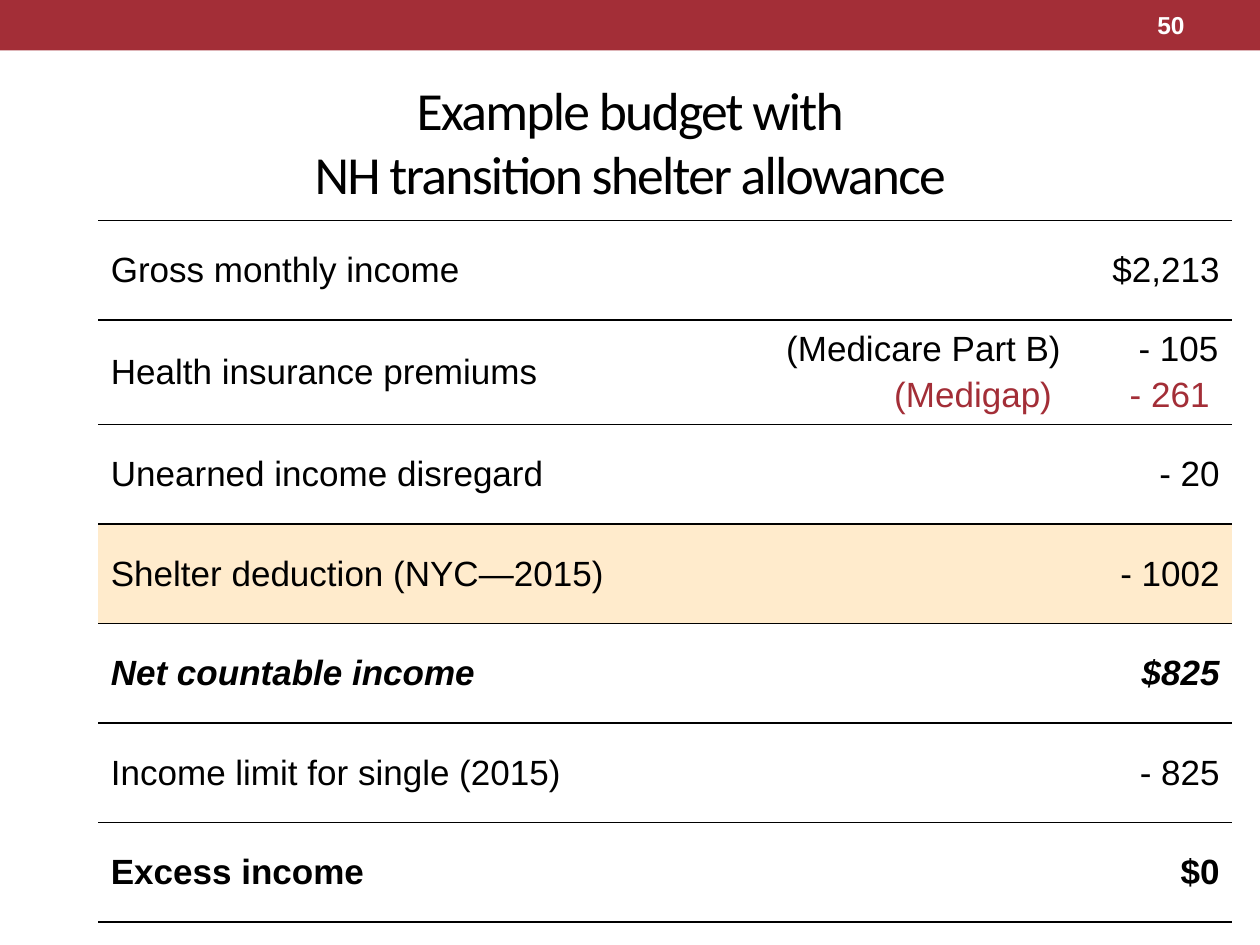
import pptx
import pptx.util
import pptx.dml.color
import pptx.enum.shapes
import pptx.enum.text
import pptx.oxml.ns
import lxml.etree

Inches = pptx.util.Inches
Pt = pptx.util.Pt
RGBColor = pptx.dml.color.RGBColor
ALIGN = pptx.enum.text.PP_ALIGN
MIDDLE = pptx.enum.text.MSO_ANCHOR.MIDDLE

RED = RGBColor(0xA3, 0x2E, 0x37)
BLACK = RGBColor(0, 0, 0)
WHITE = RGBColor(0xFF, 0xFF, 0xFF)
CREAM = RGBColor(0xFF, 0xEB, 0xCC)

TITLE_LINES = ["Example budget with", "NH transition shelter allowance"]
PAGE_NUMBER = "50"
BUDGET = [
    {"label": "Gross monthly income", "amount": "$2,213"},
    {"label": "Health insurance premiums", "height": 0.83, "premiums": [
        ("(Medicare Part B)", "- 105", BLACK, (3.04, 4.29)),
        ("(Medigap)", "- 261", RED, (2.97, 4.22)),
    ]},
    {"label": "Unearned income disregard", "amount": "- 20"},
    {"label": "Shelter deduction (NYC—2015)", "amount": "- 1002", "fill": CREAM},
    {"label": "Net countable income", "amount": "$825", "bold": True, "italic": True},
    {"label": "Income limit for single (2015)", "amount": "- 825"},
    {"label": "Excess income", "amount": "$0", "bold": True},
]
ROW_HEIGHT = 0.79
COLUMN_WIDTH = 4.5


def add_element(parent, tag, **attributes):
    return lxml.etree.SubElement(parent, pptx.oxml.ns.qn(tag), **attributes)


def add_span(para, text, size, color, name="Arial", bold=False, italic=False):
    span = para.add_run()
    span.text = text
    span.font.name = name
    span.font.size = Pt(size)
    span.font.color.rgb = color
    span.font.bold = bold
    span.font.italic = italic
    return span


def set_borders(cell):
    properties = cell._tc.get_or_add_tcPr()
    for side in ("a:lnL", "a:lnR"):
        add_element(add_element(properties, side, w="0"), "a:noFill")
    for side in ("a:lnT", "a:lnB"):
        line = add_element(properties, side, w=str(Pt(1)))
        fill = add_element(line, "a:solidFill")
        add_element(fill, "a:srgbClr", val=str(BLACK))


def add_tab_stops(para, stops):
    tabs = add_element(para._p.get_or_add_pPr(), "a:tabLst")
    for stop in stops:
        add_element(tabs, "a:tab", pos=str(Inches(stop)), algn="r")


def fill_premiums(frame, premiums):
    for index, (name, amount, color, stops) in enumerate(premiums):
        para = frame.add_paragraph() if index else frame.paragraphs[0]
        add_tab_stops(para, stops)
        if index:
            para.space_before = Pt(4)
        add_span(para, f"\t{name}\t{amount}", 20, color)


def add_header(page):
    bar = page.shapes.add_shape(pptx.enum.shapes.MSO_SHAPE.RECTANGLE,
                                0, 0, Inches(10), Inches(0.4))
    bar.shadow.inherit = False
    bar.fill.solid()
    bar.fill.fore_color.rgb = RED
    bar.line.fill.background()

    box = page.shapes.add_textbox(Inches(8.33), Inches(0.02), Inches(1.17), Inches(0.36))
    box.text_frame.word_wrap = True
    box.text_frame.vertical_anchor = MIDDLE
    para = box.text_frame.paragraphs[0]
    para.alignment = ALIGN.RIGHT
    add_span(para, PAGE_NUMBER, 14, WHITE, bold=True)


def add_title(page):
    title = page.shapes.title
    title.left, title.top = Inches(0.5), Inches(0.58)
    title.width, title.height = Inches(9), Inches(1.08)
    frame = title.text_frame
    frame.auto_size = pptx.enum.text.MSO_AUTO_SIZE.NONE
    frame.vertical_anchor = MIDDLE
    para = frame.paragraphs[0]
    para.alignment = ALIGN.CENTER
    for index, text in enumerate(TITLE_LINES):
        if index:
            para.add_line_break()
        span = add_span(para, text, 30.6, BLACK, name="Calibri")
        span.font._element.set("spc", "-100")


def add_budget(page):
    heights = [row.get("height", ROW_HEIGHT) for row in BUDGET]
    table = page.shapes.add_table(len(BUDGET), 2, Inches(0.78), Inches(1.75),
                                  Inches(2 * COLUMN_WIDTH), Inches(sum(heights))).table
    table.first_row = False
    table.horz_banding = False
    for column in table.columns:
        column.width = Inches(COLUMN_WIDTH)
    for index, row in enumerate(BUDGET):
        table.rows[index].height = Inches(heights[index])
        for column, (key, alignment) in enumerate((("label", ALIGN.LEFT), ("amount", ALIGN.RIGHT))):
            cell = table.cell(index, column)
            cell.vertical_anchor = MIDDLE
            set_borders(cell)
            cell.fill.solid()
            cell.fill.fore_color.rgb = row.get("fill", WHITE)
            if key not in row:
                fill_premiums(cell.text_frame, row["premiums"])
                continue
            para = cell.text_frame.paragraphs[0]
            para.alignment = alignment
            add_span(para, row[key], 20, BLACK,
                     bold=row.get("bold", False), italic=row.get("italic", False))


def main():
    deck = pptx.Presentation()
    deck.slide_width, deck.slide_height = Inches(10), Inches(7.5)
    page = deck.slides.add_slide(deck.slide_layouts[5])
    add_header(page)
    add_title(page)
    add_budget(page)
    deck.save("out.pptx")


if __name__ == "__main__":
    main()
